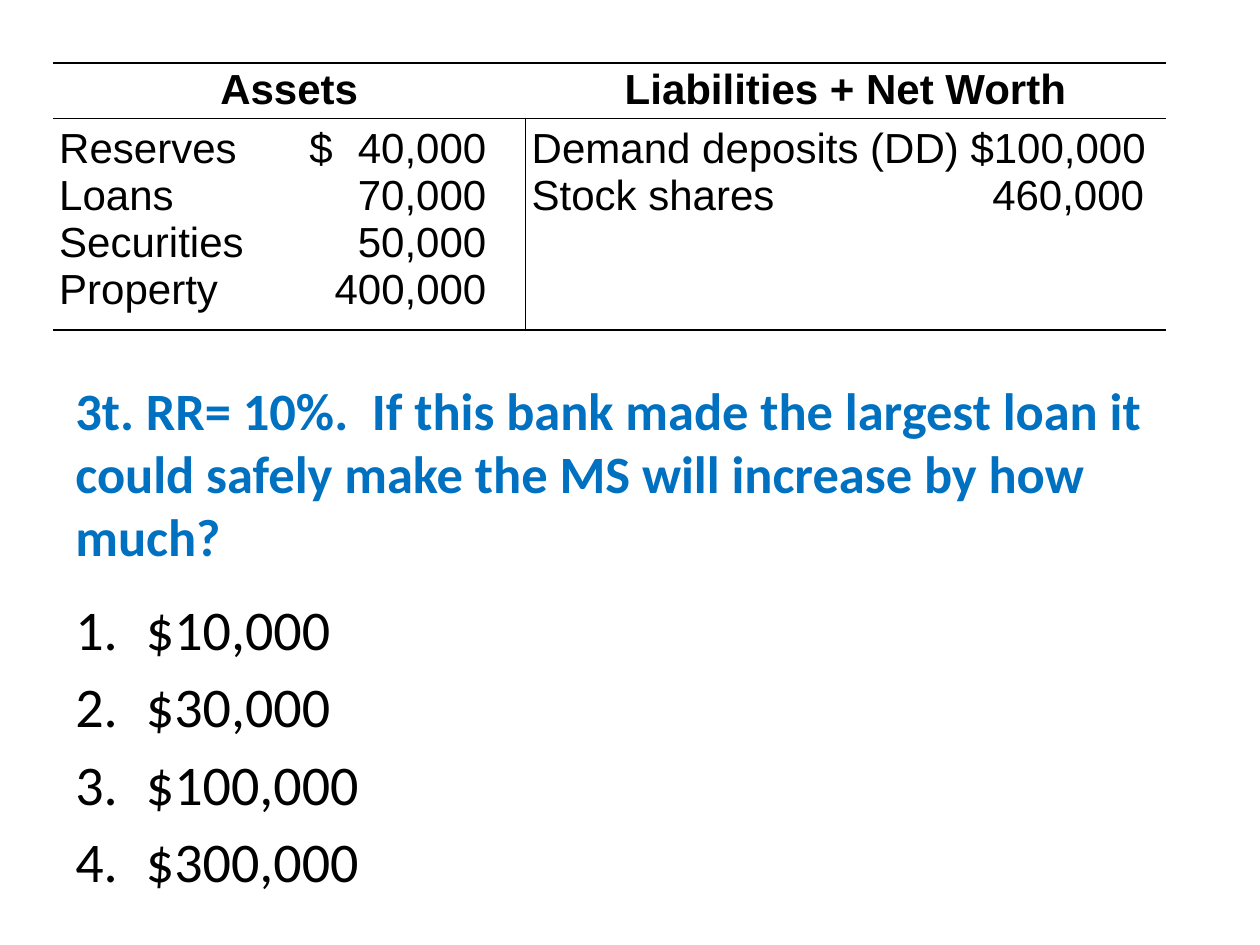
from lxml.etree import SubElement
from pptx import Presentation
from pptx.dml.color import RGBColor
from pptx.enum.text import MSO_ANCHOR as Anchor, PP_ALIGN as Align
from pptx.oxml import parse_xml
from pptx.oxml.ns import nsdecls, qn
from pptx.util import Inches, Pt


def style(paragraph, name, size, color, bold=False):
    font = paragraph.font
    font.name, font.size, font.bold = name, Pt(size), bold
    font.color.rgb = RGBColor.from_string(color)


def set_borders(cell, sides):
    """Draw 1 pt black lines on the given sides and none on the others."""
    cell_props = cell._tc.get_or_add_tcPr()
    for position, side in enumerate("LRTB"):
        paint = ('<a:solidFill><a:srgbClr val="000000"/></a:solidFill>'
                 if side in sides else "<a:noFill/>")
        cell_props.insert(position, parse_xml(
            f'<a:ln{side} {nsdecls("a")} w="{Pt(1)}">{paint}</a:ln{side}>'))


prs = Presentation()
prs.slide_width, prs.slide_height = Inches(10), Inches(7.5)
slide = prs.slides.add_slide(prs.slide_layouts[6])

# Question
question_box = slide.shapes.add_textbox(Inches(0.5), Inches(2.75), Inches(9), Inches(2))
question = question_box.text_frame
question.word_wrap = True
question.vertical_anchor = Anchor.MIDDLE
question.text = ("3t. RR= 10%.  If this bank made the largest loan it could "
                 "safely make the MS will increase by how much?")
style(question.paragraphs[0], "Calibri", 30, "0070C0", bold=True)

# Balance sheet: heading, amount tab, lines, borders of the lower cell
sides = [
    ("Assets", 3.75, 3.39,
     ["Reserves\t$\t40,000", "Loans\t70,000", "Securities\t50,000", "Property\t400,000"],
     "RTB"),
    ("Liabilities + Net Worth", 5.08, 4.86,
     ["Demand deposits (DD) $100,000", "Stock shares\t460,000"],
     "LTB"),
]
DOLLAR_TAB = 2.17
balance = slide.shapes.add_table(2, 2, Inches(0.42), Inches(0.5),
                                 Inches(8.83), Inches(1.98)).table
balance.first_row = balance.horz_banding = False
balance.rows[0].height, balance.rows[1].height = Inches(0.42), Inches(1.56)

for col, (heading, width, amount_tab, entries, lower_borders) in enumerate(sides):
    balance.columns[col].width = Inches(width)
    rows = [([heading], "TB", (0, 0.03, 0.01)),
            (entries, lower_borders, (0.05, 0.06, 0.02))]
    for row, (lines, borders, (left, top, bottom)) in enumerate(rows):
        cell = balance.cell(row, col)
        cell.fill.background()
        set_borders(cell, borders)
        cell.margin_left, cell.margin_right = Inches(left), 0
        cell.margin_top, cell.margin_bottom = Inches(top), Inches(bottom)
        cell.text = "\n".join(lines)
        for paragraph in cell.text_frame.paragraphs:
            tab_count = paragraph.text.count("\t")
            if tab_count:
                tabs = SubElement(paragraph._p.get_or_add_pPr(), qn("a:tabLst"))
                for stop in (DOLLAR_TAB, amount_tab)[-tab_count:]:
                    SubElement(tabs, qn("a:tab"), pos=str(Inches(stop)), algn="r")
            if row == 0:
                paragraph.alignment = Align.CENTER
            style(paragraph, "Arial", 24, "000000", bold=row == 0)

# Numbered answers
answers_box = slide.shapes.add_textbox(Inches(0.5), Inches(4.67), Inches(5.92), Inches(2.5))
answers = answers_box.text_frame
answers.word_wrap = True
answers.text = "\n".join(["$10,000", "$30,000", "$100,000", "$300,000"])
for answer in answers.paragraphs:
    answer_props = answer._p.get_or_add_pPr()
    answer_props.set("marL", str(Inches(0.56)))
    answer_props.set("indent", str(-Inches(0.56)))
    SubElement(answer_props, qn("a:buFont"), typeface="+mj-lt")
    SubElement(answer_props, qn("a:buAutoNum"), type="arabicPeriod")
    answer.space_before = Pt(5.8)
    style(answer, "Calibri", 32, "000000")

prs.save("out.pptx")
